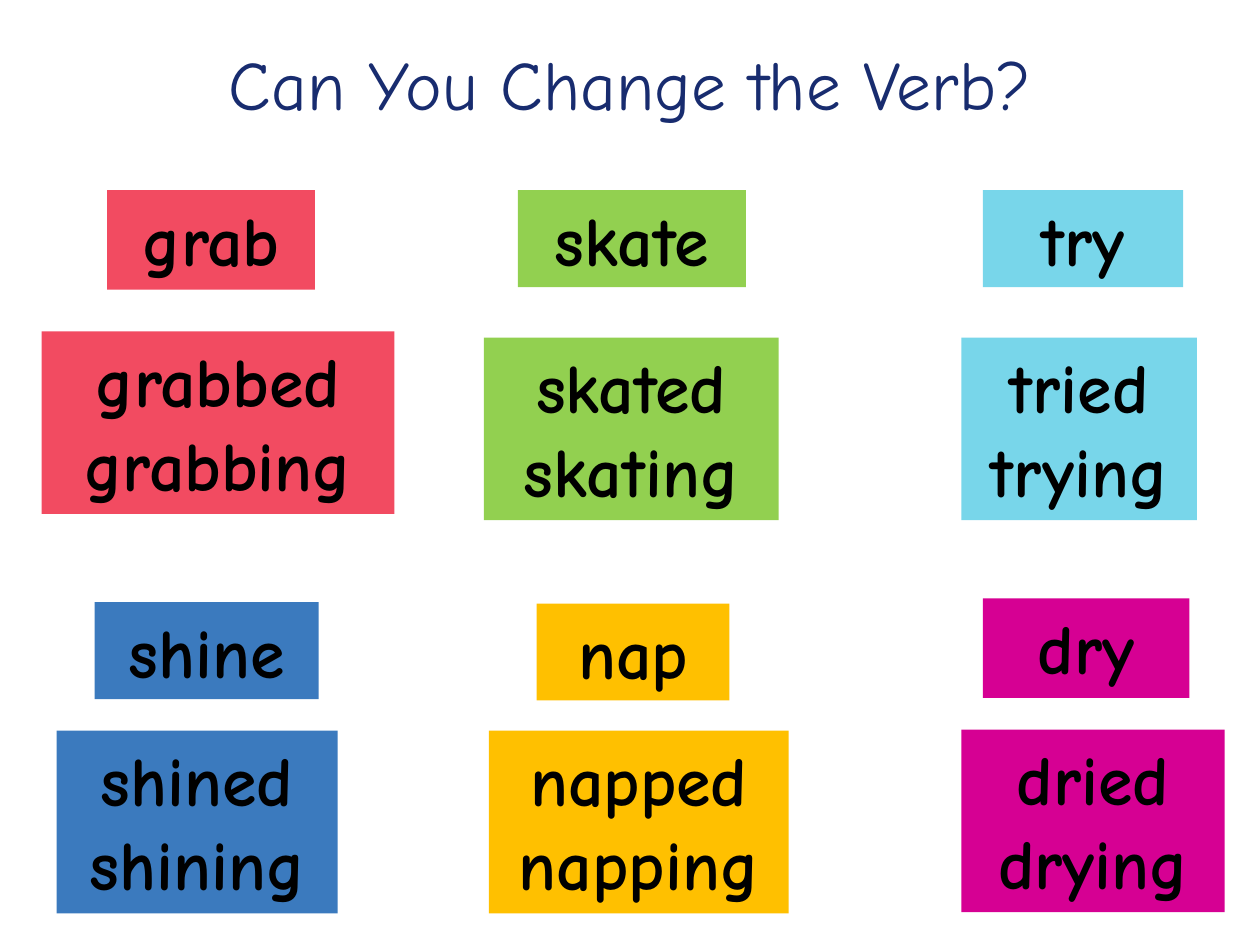
from dataclasses import dataclass

from pptx import Presentation
from pptx.dml.color import RGBColor
from pptx.enum.shapes import MSO_SHAPE as Shape
from pptx.enum.text import MSO_ANCHOR as Anchor, MSO_AUTO_SIZE as AutoSize, PP_ALIGN as Align
from pptx.util import Inches, Pt

WIDTH, HEIGHT = Inches(10), Inches(7.5)
FONT = "Comic Neue"
FORMS_HEIGHT = 19.33


@dataclass
class Verb:
    """A verb, its changed forms, and both cards in percent of the slide."""
    colour: str
    base: str
    forms: str
    base_place: tuple
    forms_place: tuple


VERBS = [
    Verb("F24B61", "grab", "grabbed\ngrabbing", (8.5, 20.13, 16.5, 10.53), (3.3, 35.07, 28)),
    Verb("92D050", "skate", "skated\nskating", (41.1, 20.13, 18.1, 10.27), (38.4, 35.73, 23.4)),
    Verb("78D6EA", "try", "tried\ntrying", (78, 20.13, 15.9, 10.27), (76.3, 35.73, 18.7)),
    Verb("3B7ABE", "shine", "shined\nshining", (7.5, 63.73, 17.8, 10.27), (4.5, 77.33, 22.3)),
    Verb("FFC000", "nap", "napped napping", (42.6, 63.87, 15.3, 10.27), (38.8, 77.33, 23.8)),
    Verb("D60093", "dry", "dried\ndrying", (78, 63.33, 16.4, 10.53), (76.3, 77.2, 20.9)),
]


def colour_of(code):
    """Turn a hex string into a colour."""
    return RGBColor.from_string(code)


def measure(left, top, width, height):
    """Turn percentages of the slide into lengths."""
    return (int(WIDTH * left / 100), int(HEIGHT * top / 100),
            int(WIDTH * width / 100), int(HEIGHT * height / 100))


def write(frame, text, size, colour, bold):
    """Fill a text frame with centred text that starts at the top."""
    frame.text = text
    frame.word_wrap = True
    frame.vertical_anchor = Anchor.TOP
    for para in frame.paragraphs:
        para.alignment = Align.CENTER
        for span in para.runs:
            span.font.name = FONT
            span.font.size = Pt(size)
            span.font.bold = bold
            span.font.color.rgb = colour_of(colour)


def add_title(page, text):
    """Place the slide title."""
    title = page.shapes.title
    title.left, title.top, title.width, title.height = measure(5, 3.73, 90, 16.67)
    write(title.text_frame, text, 39.6, "182C6F", False)
    title.text_frame.auto_size = AutoSize.NONE


def add_card(page, text, colour, place):
    """Add a coloured word card."""
    card = page.shapes.add_shape(Shape.RECTANGLE, *measure(*place))
    card.shadow.inherit = False
    card.fill.solid()
    card.fill.fore_color.rgb = colour_of(colour)
    card.line.fill.background()
    write(card.text_frame, text, 40, "000000", True)
    card.text_frame.auto_size = AutoSize.SHAPE_TO_FIT_TEXT


def main():
    """Build and save the verb slide."""
    deck = Presentation()
    deck.slide_width, deck.slide_height = WIDTH, HEIGHT
    page = deck.slides.add_slide(deck.slide_layouts[5])
    add_title(page, "Can You Change the Verb?")
    for verb in VERBS:
        add_card(page, verb.base, verb.colour, verb.base_place)
        add_card(page, verb.forms, verb.colour, (*verb.forms_place, FORMS_HEIGHT))
    deck.save("out.pptx")


if __name__ == "__main__":
    main()
